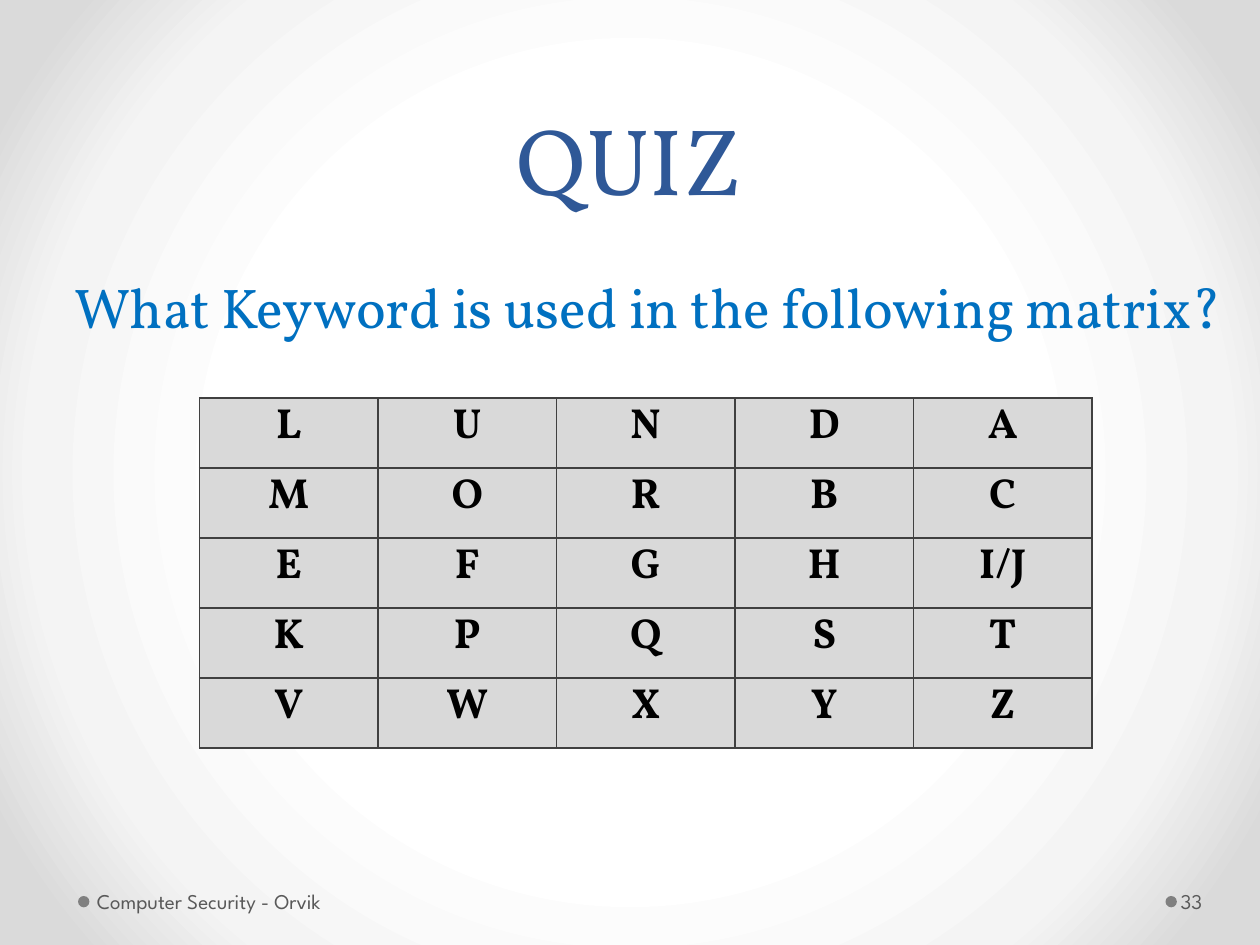
from pptx import Presentation
from pptx.dml.color import RGBColor as Rgb
from pptx.enum.shapes import MSO_SHAPE as Kind
from pptx.enum.text import MSO_ANCHOR as Anchor, MSO_AUTO_SIZE as Auto, PP_ALIGN as Align
from pptx.oxml import parse_xml
from pptx.oxml.ns import nsdecls, qn
from pptx.util import Pt

COLORS = {
    "title": "2F5897",
    "ask": "0070C0",
    "foot": "595959",
    "dot": "808080",
    "cell": "D9D9D9",
    "line": "404040",
    "ink": "000000",
}
STOPS = ((50, "FFFFFF"), (76, "F4F4F4"), (92, "DADADA"))
SERIF, SANS = "Vollkorn", "League Spartan"
MATRIX = (
    ("L", "U", "N", "D", "A"),
    ("M", "O", "R", "B", "C"),
    ("E", "F", "G", "H", "I/J"),
    ("K", "P", "Q", "S", "T"),
    ("V", "W", "X", "Y", "Z"),
)


def write(frame, text, font=SERIF, size=12, color="ink", bold=False, align=Align.LEFT, space=None):
    par = frame.paragraphs[0]
    par.alignment = align
    if space:
        par.line_spacing = Pt(space)
    run = par.add_run()
    run.text = text
    run.font.name = font
    run.font.size = Pt(size)
    run.font.bold = bold
    run.font.color.rgb = Rgb.from_string(COLORS[color])


class Deck:
    def __init__(self, wide, high):
        self.show = Presentation()
        self.show.slide_width, self.show.slide_height = Pt(wide), Pt(high)
        self.slide = self.show.slides.add_slide(self.show.slide_layouts[5])

    def back(self, stops):
        self.slide.background.fill.gradient()
        old = self.slide.element.find(".//" + qn("a:gradFill"))
        marks = "".join(
            f'<a:gs pos="{pos * 1000}"><a:srgbClr val="{tone}"/></a:gs>' for pos, tone in stops
        )
        new = parse_xml(
            f'<a:gradFill {nsdecls("a")} rotWithShape="1"><a:gsLst>{marks}</a:gsLst>'
            '<a:path path="circle"><a:fillToRect l="50000" t="50000" r="50000" b="50000"/>'
            "</a:path></a:gradFill>"
        )
        old.getparent().replace(old, new)

    def title(self, text, x, y, w, h):
        box = self.slide.shapes.title
        box.left, box.top, box.width, box.height = Pt(x), Pt(y), Pt(w), Pt(h)
        frame = box.text_frame
        frame.auto_size = Auto.NONE
        frame.vertical_anchor = Anchor.BOTTOM
        write(frame, text, size=54, color="title", align=Align.CENTER, space=58)

    def dot(self, x, y, size):
        dot = self.slide.shapes.add_shape(Kind.OVAL, Pt(x), Pt(y), Pt(size), Pt(size))
        dot.shadow.inherit = False
        dot.fill.solid()
        dot.fill.fore_color.rgb = Rgb.from_string(COLORS["dot"])
        dot.line.fill.background()

    def text(self, text, x, y, w, h, left=7.2, right=7.2, wrap=True, mid=False, **style):
        frame = self.slide.shapes.add_textbox(Pt(x), Pt(y), Pt(w), Pt(h)).text_frame
        frame.word_wrap = wrap
        frame.auto_size = Auto.NONE if wrap else Auto.SHAPE_TO_FIT_TEXT
        frame.margin_left, frame.margin_right = Pt(left), Pt(right)
        frame.vertical_anchor = Anchor.MIDDLE if mid else Anchor.TOP
        write(frame, text, **style)

    def foot(self, text, x, w, left, right):
        self.text(text, x, 500.4, w, 28.8, left, right, mid=True, font=SANS, color="foot")

    def edge(self, cell):
        props = cell._tc.get_or_add_tcPr()
        for side in ("lnL", "lnR", "lnT", "lnB"):
            props.append(parse_xml(
                f'<a:{side} {nsdecls("a")} w="{Pt(1)}"><a:solidFill>'
                f'<a:srgbClr val="{COLORS["line"]}"/></a:solidFill></a:{side}>'
            ))

    def grid(self, rows, x, y, wide, high):
        down, across = len(rows), len(rows[0])
        table = self.slide.shapes.add_table(
            down, across, Pt(x), Pt(y), Pt(wide * across), Pt(high * down)
        ).table
        table.first_row = table.horz_banding = False
        for col in table.columns:
            col.width = Pt(wide)
        for r, row in enumerate(rows):
            table.rows[r].height = Pt(high)
            for c, mark in enumerate(row):
                cell = table.cell(r, c)
                cell.margin_left = cell.margin_right = Pt(5)
                cell.margin_top = cell.margin_bottom = 0
                self.edge(cell)
                cell.fill.solid()
                cell.fill.fore_color.rgb = Rgb.from_string(COLORS["cell"])
                write(cell.text_frame, mark, size=24, bold=True, align=Align.CENTER)


def main():
    deck = Deck(720, 540)
    deck.back(STOPS)
    for x in (666, 44.6):
        deck.dot(x, 512, 6.5)
    deck.title("QUIZ", 36, 0, 648, 126)
    deck.foot("Computer Security - Orvik", 51.8, 224, 3.6, 7.2)
    deck.foot("33", 672.5, 44, 2.2, 3.6)
    deck.grid(MATRIX, 114, 227.5, 102, 40)
    deck.text("What Keyword is used in the following matrix?", 35.3, 152, 693.4, 46,
              wrap=False, size=32, color="ask")
    deck.show.save("out.pptx")


if __name__ == "__main__":
    main()
